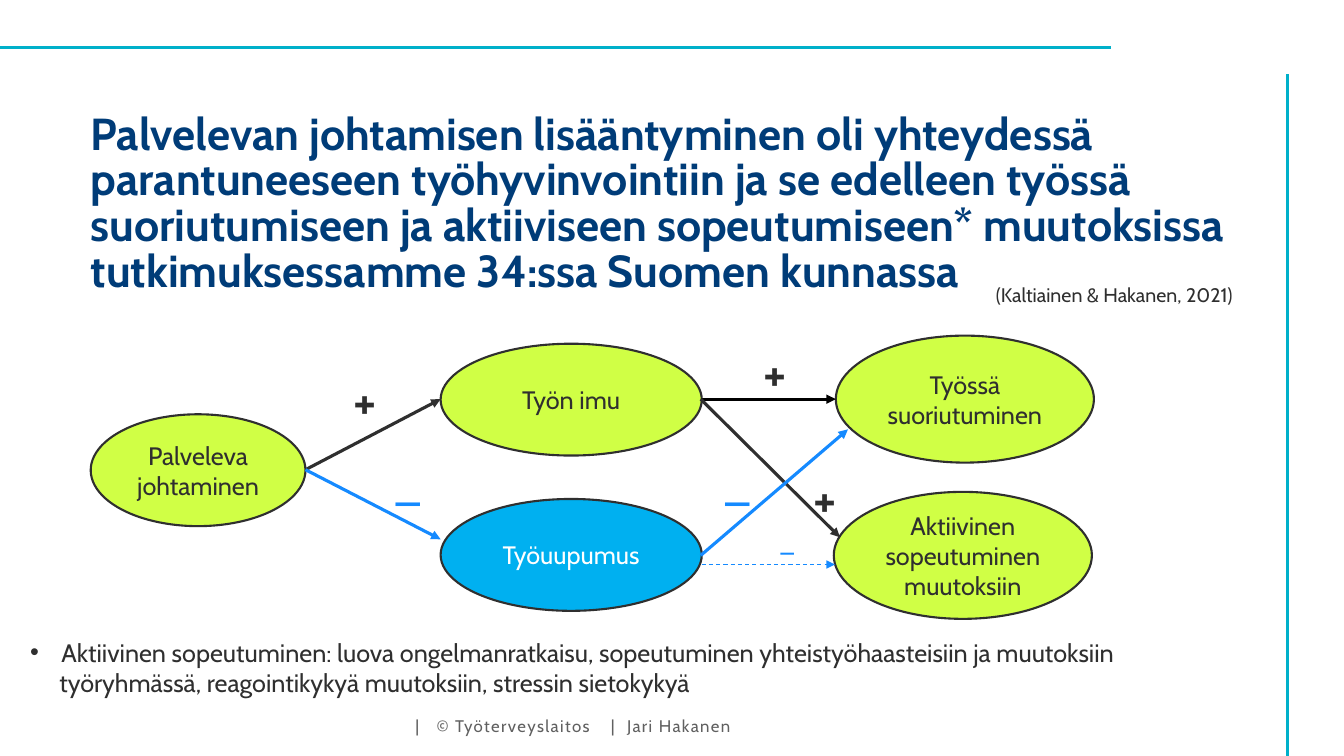
from dataclasses import dataclass

from lxml.etree import SubElement
from pptx import Presentation
from pptx.dml.color import RGBColor
from pptx.enum.dml import MSO_LINE
from pptx.enum.shapes import MSO_CONNECTOR, MSO_SHAPE
from pptx.enum.text import MSO_ANCHOR, MSO_AUTO_SIZE, PP_ALIGN
from pptx.oxml.ns import qn
from pptx.util import Inches, Pt


@dataclass(frozen=True)
class Theme:
    font: str = "Cabin"
    math: str = "Arial"
    navy: str = "003C78"
    teal: str = "00B0CA"
    ink: str = "2F2F2F"
    black: str = "000000"
    white: str = "FFFFFF"
    grey: str = "606060"
    lime: str = "D0FF45"
    sky: str = "00B0F0"
    blue: str = "158AFF"
    title: int = 32
    sign: int = 36
    minor: int = 20
    body: int = 18
    cite: int = 14
    foot: int = 12


THEME = Theme()


def color(code):
    return RGBColor.from_string(code)


def write(shape, text, size=THEME.body, ink=THEME.ink, font=THEME.font, bold=False,
          align=PP_ALIGN.LEFT, anchor=MSO_ANCHOR.TOP, wrap=True, grow=False,
          inset=None, lines=None, track=0, tabs=(), dents=(), bullet=None):
    frame = shape.text_frame
    frame.word_wrap = wrap
    frame.vertical_anchor = anchor
    frame.auto_size = MSO_AUTO_SIZE.SHAPE_TO_FIT_TEXT if grow else MSO_AUTO_SIZE.NONE
    if inset is not None:
        frame.margin_left = frame.margin_right = Inches(inset)
        frame.margin_top = frame.margin_bottom = Inches(inset)
    for i, part in enumerate(text.split("\n")):
        para = frame.paragraphs[0] if i == 0 else frame.add_paragraph()
        props = para._p.get_or_add_pPr()
        if dents:
            left, first = dents[i]
            props.set("marL", str(Inches(left)))
            props.set("indent", str(Inches(first)))
        if bullet and i == 0:
            SubElement(props, qn("a:buFont"), typeface=THEME.math)
            SubElement(props, qn("a:buChar"), char=bullet)
        if tabs:
            stops = SubElement(props, qn("a:tabLst"))
            for stop in tabs:
                SubElement(stops, qn("a:tab"), pos=str(Inches(stop)), algn="l")
        para.alignment = align
        if lines:
            para.line_spacing = lines
        run = para.add_run()
        run.text = part
        run.font.size = Pt(size)
        run.font.name = font
        run.font.bold = bold
        run.font.color.rgb = color(ink)
        if track:
            run._r.get_or_add_rPr().set("spc", str(track * 100))


def label(slide, box, text, **style):
    shape = slide.shapes.add_textbox(*map(Inches, box))
    write(shape, text, **style)


def draw_line(slide, start, end, ink, width, arrow=False, dash=False):
    line = slide.shapes.add_connector(
        MSO_CONNECTOR.STRAIGHT, *map(Inches, (*start, *end)))
    line.line.color.rgb = color(ink)
    line.line.width = Pt(width)
    if dash:
        line.line.dash_style = MSO_LINE.DASH
    props = line._element.spPr
    if arrow:
        SubElement(props.find(qn("a:ln")), qn("a:tailEnd"), type="triangle")
    SubElement(props, qn("a:effectLst"))


def node(slide, box, text, fill=THEME.lime, ink=THEME.ink):
    shape = slide.shapes.add_shape(MSO_SHAPE.OVAL, *map(Inches, box))
    shape.shadow.inherit = False
    shape.fill.solid()
    shape.fill.fore_color.rgb = color(fill)
    shape.line.color.rgb = color(THEME.ink)
    shape.line.width = Pt(1.5)
    write(shape, text, ink=ink, align=PP_ALIGN.CENTER, anchor=MSO_ANCHOR.MIDDLE)


def frame_lines(slide, left, top, right, base):
    draw_line(slide, (left, top), (11.02, top), THEME.teal, 1.85)
    draw_line(slide, (right, base), (right, 0.73), THEME.teal, 1.85)


def header(slide, x, y, width, height):
    label(slide, (x, y, width, height),
          "Palvelevan johtamisen lisääntyminen oli yhteydessä parantuneeseen "
          "työhyvinvointiin ja se edelleen työssä suoriutumiseen ja aktiiviseen "
          "sopeutumiseen* muutoksissa tutkimuksessamme 34:ssa Suomen kunnassa",
          size=THEME.title, ink=THEME.navy, bold=True, inset=0, lines=0.85,
          anchor=MSO_ANCHOR.BOTTOM)
    label(slide, (x + 8.88, y + 0.67, 3.71, 0.34), "(Kaltiainen & Hakanen, 2021)",
          size=THEME.cite, grow=True)


def model(slide, x, y):
    mid, low = (2.59, 1.11), (2.56, 1.26)
    nodes = [
        (0, 0.78, (2.13, 1.11), "Palveleva johtaminen", {}),
        (3.47, 0.08, mid, "Työn imu", {}),
        (3.47, 1.62, mid, "Työuupumus", {"fill": THEME.sky, "ink": THEME.white}),
        (7.39, 0, low, "Työssä suoriutuminen", {}),
        (7.37, 1.55, low, "Aktiivinen sopeutuminen muutoksiin", {}),
    ]
    for dx, dy, size, text, style in nodes:
        node(slide, (x + dx, y + dy, *size), text, **style)

    lead, drive = (2.13, 1.33), (6.05, 0.63)
    arrows = [
        (lead, (3.47, 0.63), THEME.ink, 2.25, False),
        (lead, (3.47, 2.02), THEME.blue, 2.25, False),
        (drive, (7.39, 0.63), THEME.black, 2.25, False),
        (drive, (7.43, 2), THEME.ink, 2.25, False),
        ((6.05, 2.18), (7.51, 0.93), THEME.blue, 2.25, False),
        ((6.06, 2.27), (7.38, 2.27), THEME.blue, 0.75, True),
    ]
    for start, end, ink, width, dash in arrows:
        draw_line(slide, (x + start[0], y + start[1]), (x + end[0], y + end[1]),
                  ink, width, arrow=True, dash=dash)

    for dx, dy in [(2.51, 0.28), (6.57, 0), (7.07, 1.25)]:
        label(slide, (x + dx, y + dy, 0.56, 0.71), "+", size=THEME.sign,
              bold=True, wrap=False, grow=True)
    for dx, dy, width, height, size in [(2.9, 1.29, 0.5, 0.71, THEME.sign),
                                        (6.17, 1.29, 0.5, 0.71, THEME.sign),
                                        (6.73, 1.93, 0.36, 0.44, THEME.minor)]:
        label(slide, (x + dx, y + dy, width, height), "−", size=size,
              ink=THEME.blue, font=THEME.math, wrap=False, grow=True)


def footer(slide, x, y, width, height):
    label(slide, (x, y, width, height),
          "Aktiivinen sopeutuminen: luova ongelmanratkaisu, sopeutuminen "
          "yhteistyöhaasteisiin ja muutoksiin\n"
          "työryhmässä, reagointikykyä muutoksiin, stressin sietokykyä",
          grow=True, bullet="•", dents=[(0.31, -0.31), (0.29, 0)])
    label(slide, (x + 3.92, y + 0.73, 3.6, 0.4),
          "|\t© Työterveyslaitos\t|\tJari Hakanen", size=THEME.foot,
          ink=THEME.grey, inset=0, track=1, tabs=(0.21, 1.94, 2.1),
          anchor=MSO_ANCHOR.MIDDLE)


def main():
    deck = Presentation()
    deck.slide_width = Inches(13.33)
    deck.slide_height = Inches(7.5)
    slide = deck.slides.add_slide(deck.slide_layouts[6])
    frame_lines(slide, 0, 0.47, 12.77, 7.5)
    header(slide, 0.9, 2.09, 11.26, 0.85)
    model(slide, 0.9, 3.33)
    footer(slide, 0.2, 6.27, 11.62, 0.71)
    deck.save("out.pptx")


if __name__ == "__main__":
    main()
